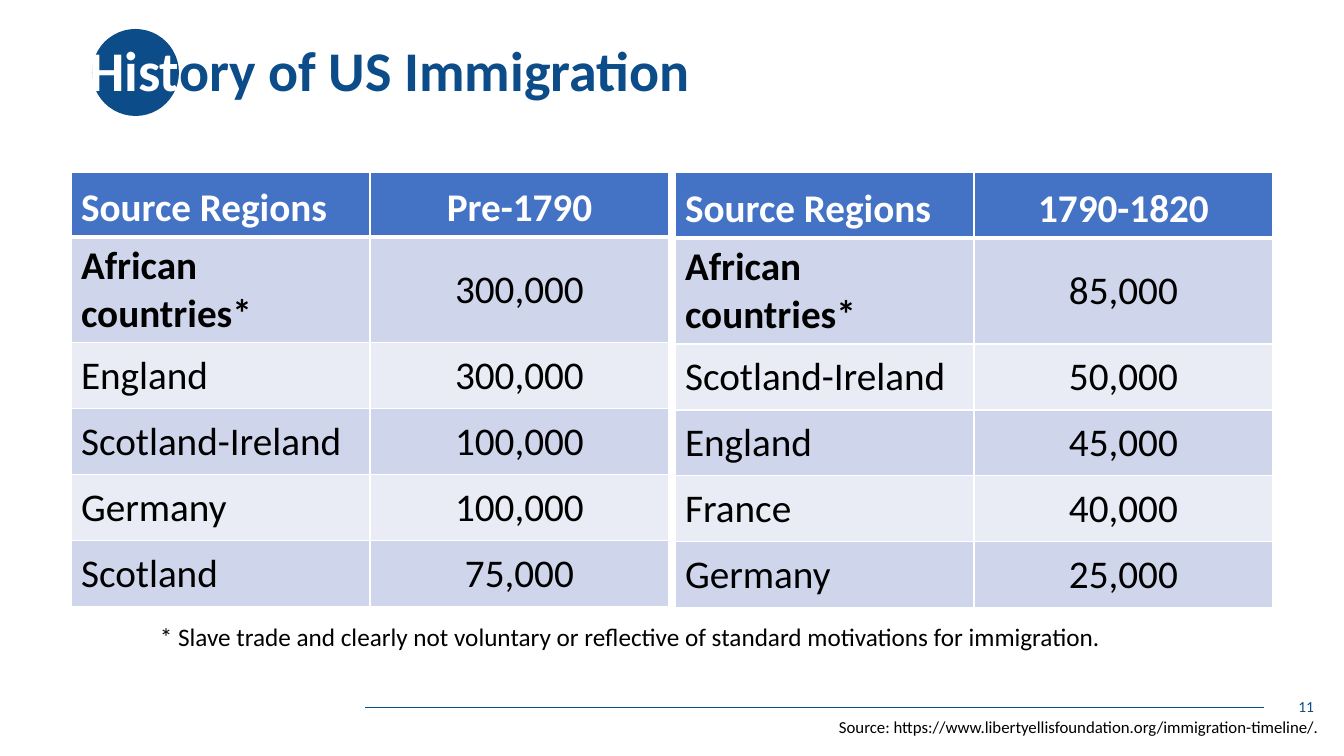
import pptx
import pptx.util
import pptx.dml.color
import pptx.enum.shapes
import pptx.enum.text
import pptx.oxml
import pptx.oxml.ns

ALIGN = pptx.enum.text.PP_ALIGN
ANCHOR = pptx.enum.text.MSO_ANCHOR
SHAPES = pptx.enum.shapes

NAVY, WHITE, BLACK = "0C4C88", "FFFFFF", "000000"
HEADER_BLUE, BANDS = "4472C4", ("CFD5EA", "E9EBF5")
FONT = "Calibri"

TITLE = [("Hist", WHITE), ("ory of US Immigration", NAVY)]
PERIODS = [
    {"left": 71, "header_height": 65, "rows": [
        ("Source Regions", "Pre-1790"),
        ("African countries*", "300,000"),
        ("England", "300,000"),
        ("Scotland-Ireland", "100,000"),
        ("Germany", "100,000"),
        ("Scotland", "75,000")]},
    {"left": 675, "header_height": 66, "rows": [
        ("Source Regions", "1790-1820"),
        ("African countries*", "85,000"),
        ("Scotland-Ireland", "50,000"),
        ("England", "45,000"),
        ("France", "40,000"),
        ("Germany", "25,000")]},
]
TABLE_TOP, COLUMN_WIDTH, AFRICAN_HEIGHT, ROW_HEIGHT = 172, 299, 104, 66

# text, box, size, colour, alignment, anchor, wraps
NOTES = [
    ("11", (1022, 686, 302, 40), 11, NAVY, ALIGN.RIGHT, ANCHOR.MIDDLE, True),
    ("Source: https://www.libertyellisfoundation.org/immigration-timeline/.",
     (829, 712, 505, 30), 12, BLACK, ALIGN.LEFT, ANCHOR.TOP, False),
    ("* Slave trade and clearly not voluntary or reflective of standard "
     "motivations for immigration.",
     (150, 616, 966, 40), 18, BLACK, ALIGN.LEFT, ANCHOR.TOP, False),
]


def px(length):
    return pptx.util.Emu(round(length * 914400 / 100.8))


def rgb(colour):
    return pptx.dml.color.RGBColor.from_string(colour)


def add_run(paragraph, text, size, colour, bold=False):
    run = paragraph.add_run()
    run.text = text
    run.font.name = FONT
    run.font.size = pptx.util.Pt(size)
    run.font.bold = bold
    run.font.color.rgb = rgb(colour)


def set_borders(cell, top, bottom):
    """Draw white cell borders; top and bottom are widths in points."""
    properties = cell._tc.get_or_add_tcPr()
    widths = {"lnL": 1, "lnR": 1, "lnT": top, "lnB": bottom}
    for position, (side, width) in enumerate(widths.items()):
        properties.insert(position, pptx.oxml.parse_xml(
            f'<a:{side} {pptx.oxml.ns.nsdecls("a")} w="{pptx.util.Pt(width)}">'
            f'<a:solidFill><a:srgbClr val="{WHITE}"/></a:solidFill></a:{side}>'))


def add_period(slide, left, header_height, rows):
    heights = [header_height, AFRICAN_HEIGHT] + [ROW_HEIGHT] * (len(rows) - 2)
    table = slide.shapes.add_table(
        len(rows), 2, px(left), px(TABLE_TOP),
        px(2 * COLUMN_WIDTH), px(sum(heights))).table
    for column in table.columns:
        column.width = px(COLUMN_WIDTH)
    for r, values in enumerate(rows):
        table.rows[r].height = px(heights[r])
        header = r == 0
        for c, value in enumerate(values):
            cell = table.cell(r, c)
            cell.fill.solid()
            cell.fill.fore_color.rgb = rgb(HEADER_BLUE if header else BANDS[(r - 1) % 2])
            cell.vertical_anchor = ANCHOR.BOTTOM if header else ANCHOR.MIDDLE
            paragraph = cell.text_frame.paragraphs[0]
            paragraph.alignment = ALIGN.CENTER if c else ALIGN.LEFT
            add_run(paragraph, value, 28, WHITE if header else BLACK,
                    bold=header or (r == 1 and c == 0))
            set_borders(cell, top=3 if r == 1 else 1, bottom=3 if header else 1)


def add_note(slide, text, box, size, colour, alignment, anchor, wraps):
    frame = slide.shapes.add_textbox(*map(px, box)).text_frame
    frame.word_wrap = wraps
    if not wraps:
        frame.auto_size = pptx.enum.text.MSO_AUTO_SIZE.SHAPE_TO_FIT_TEXT
    frame.vertical_anchor = anchor
    frame.paragraphs[0].alignment = alignment
    add_run(frame.paragraphs[0], text, size, colour)


def add_heading(slide):
    rule = slide.shapes.add_connector(
        SHAPES.MSO_CONNECTOR.STRAIGHT, px(365), px(707), px(1264), px(707))
    rule.line.color.rgb = rgb(NAVY)
    rule.line.width = pptx.util.Pt(0.5)
    rule._element.spPr.append(
        pptx.oxml.parse_xml(f'<a:effectLst {pptx.oxml.ns.nsdecls("a")}/>'))

    disc = slide.shapes.add_shape(
        SHAPES.MSO_SHAPE.OVAL, px(92), px(29), px(87), px(87))
    disc.shadow.inherit = False
    disc.fill.solid()
    disc.fill.fore_color.rgb = rgb(NAVY)
    disc.line.fill.background()

    title = slide.shapes.title
    disc._element.addnext(title._element)  # the title lies over the disc
    title.left, title.top, title.width, title.height = map(px, (79, 0, 1159, 146))
    frame = title.text_frame
    frame.word_wrap = True
    frame.auto_size = pptx.enum.text.MSO_AUTO_SIZE.NONE
    frame.vertical_anchor = ANCHOR.MIDDLE
    paragraph = frame.paragraphs[0]
    paragraph.alignment = ALIGN.LEFT
    paragraph.line_spacing = 0.9
    for text, colour in TITLE:
        add_run(paragraph, text, 40, colour, bold=True)


def main():
    deck = pptx.Presentation()
    deck.slide_width, deck.slide_height = px(1344), px(756)
    slide = deck.slides.add_slide(deck.slide_layouts.get_by_name("Title Only"))
    add_heading(slide)
    for period in PERIODS:
        add_period(slide, **period)
    for note in NOTES:
        add_note(slide, *note)
    deck.save("out.pptx")


if __name__ == "__main__":
    main()
